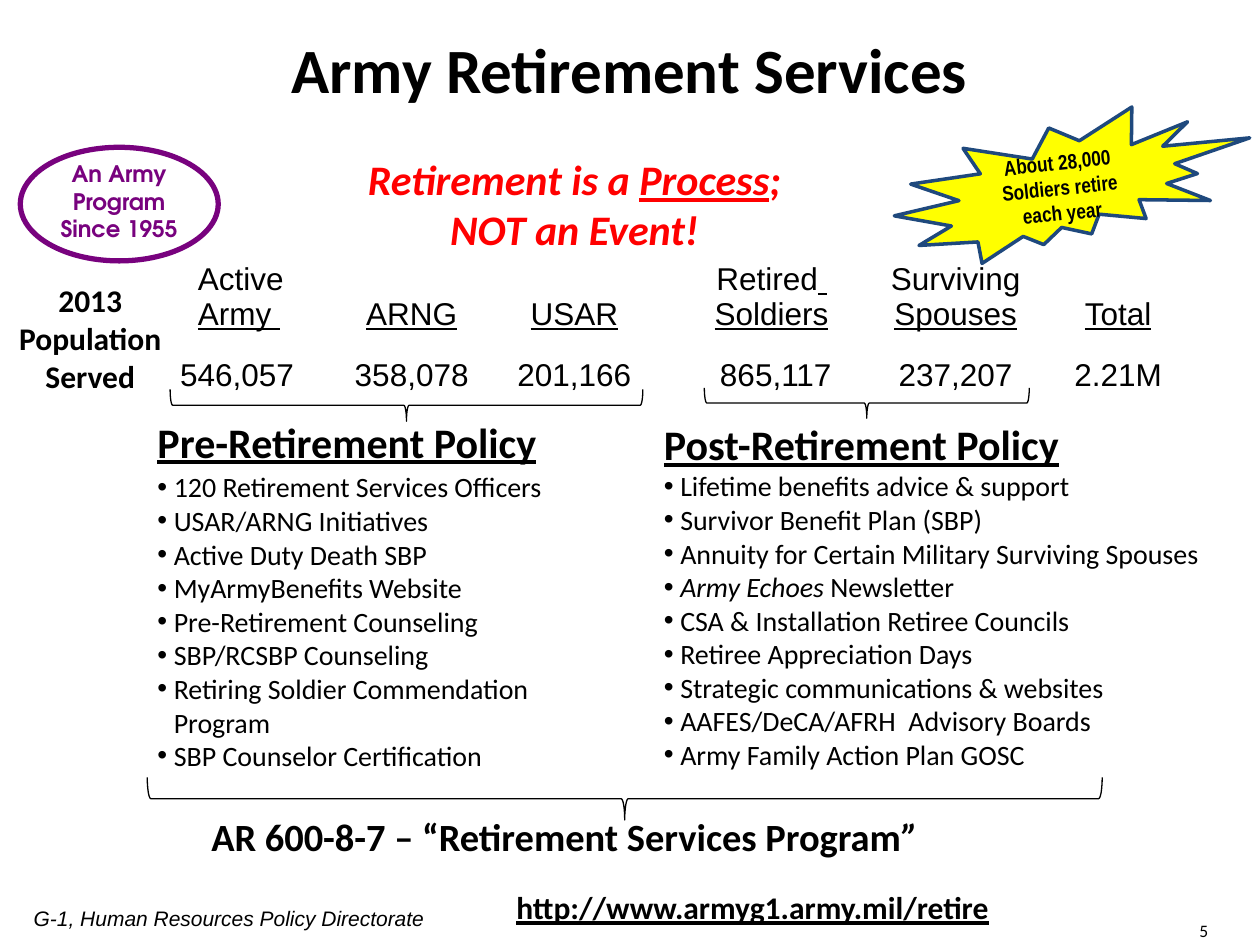
"""Build the Army Retirement Services overview slide."""
from lxml.etree import SubElement
from pptx import Presentation
from pptx.dml.color import RGBColor
from pptx.enum.shapes import MSO_SHAPE as Shape
from pptx.enum.text import MSO_ANCHOR as Anchor, MSO_AUTO_SIZE as AutoSize, PP_ALIGN as Align
from pptx.oxml.ns import qn
from pptx.util import Cm, Pt

THEME = {
    "colors": {"ink": "000000", "paper": "FFFFFF", "alert": "FF0000", "badge": "78027E",
               "burst": "FFFF00", "burst line": "1F497D"},
    "styles": {
        "title": {"name": "Calibri", "size": 36, "bold": True},
        "heading": {"name": "Calibri", "size": 24, "bold": True, "underline": True},
        "item": {"name": "Calibri", "size": 16, "bold": False},
        "slogan": {"name": "Calibri", "size": 24, "bold": True, "italic": True, "color": "alert"},
        "label": {"name": "Calibri", "size": 18, "bold": True},
        "link": {"name": "Calibri", "size": 18, "bold": True, "underline": True},
        "rule": {"name": "Calibri", "size": 22, "bold": True},
        "table": {"name": "Arial", "size": 18, "bold": False},
        "badge": {"name": "TeX Gyre Adventor", "size": 13, "bold": True, "color": "badge"},
        "burst": {"name": "Arial Narrow", "size": 12, "bold": True},
        "footer": {"name": "Arial", "size": 12, "italic": True},
        "number": {"name": "Calibri", "size": 10},
    },
}
PLAIN_TABLE = "{2D5ABB26-0587-4C30-8999-92F81FD0307C}"
UNDER, ITALIC = {"underline": True}, {"italic": True}

TITLE = ("Army Retirement Services", (3.99, 0.48, 17.4, 1.8))
POLICIES = [
    ("Pre-Retirement Policy", (2.92, 8.26, 11.48, 7.52), 2, [
        "120 Retirement Services Officers", "USAR/ARNG Initiatives", "Active Duty Death SBP",
        "MyArmyBenefits Website", "Pre-Retirement Counseling", "SBP/RCSBP Counseling",
        "Retiring Soldier Commendation\vProgram", "SBP Counselor Certification"]),
    ("Post-Retirement Policy", (13.13, 8.31, 11.9, 7.44), 0, [
        "Lifetime benefits advice & support", "Survivor Benefit Plan (SBP)",
        "Annuity for Certain Military Surviving Spouses",
        [("Army Echoes ", ITALIC), ("Newsletter", {})],
        "CSA & Installation Retiree Councils", "Retiree Appreciation Days",
        "Strategic communications & websites", "AAFES/DeCA/AFRH  Advisory Boards",
        "Army Family Action Plan GOSC"]),
]
POPULATION = [
    (3.28, ["Active", [("Army ", UNDER)]], "546,057", Align.LEFT, (0.36, 0)),
    (3.28, [[("ARNG", UNDER)]], "358,078", Align.CENTER, (0, 0)),
    (3.28, [[("USAR", UNDER)]], "201,166", Align.CENTER, (0, 0)),
    (4.14, [[("Retired", {}), (" ", UNDER)], [("Soldiers", UNDER)]], "865,117",
     Align.CENTER, (0.53, 0.7)),
    (3.81, [[("Surviving ", {}), ("Spouses", UNDER)]], "237,207", Align.CENTER, (0, 0)),
    (2.74, [[("Total", UNDER)]], "2.21M", Align.CENTER, (0, 0)),
]
TABLE_ORIGIN, ROW_HEIGHTS, CELL_MARGIN = (3.38, 4.72), (2.11, 1.22), 0.25
BRACES = [(3.43, 7.85, 9.53, 0.64), (14.2, 7.82, 6.55, 0.61), (2.97, 15.67, 19.25, 0.86)]
BURST = ("About 28,000 Soldiers retire each year", (17.98, 2.29, 7.29, 2.82))
BADGE = (["An Army", "Program", "Since 1955"], (0, 3.1, 4.8, 1.93), (0.41, 2.97, 3.99, 2.29))
TEXTS = [
    ("footer", ["G-1, Human Resources Policy Directorate"], (0.43, 18.14, 8.89, 0.76), Align.LEFT),
    ("number", ["5"], (23.93, 18.42, 1.3, 0.69), Align.LEFT),
    ("rule", [[("AR 600-8-7 – “Retirement Services Program", {}), ("”", ITALIC)]],
     (4.01, 16.26, 17.2, 1.19), Align.LEFT),
    ("label", ["2013", "Population", "Served"], (-0.1, 5.54, 3.84, 2.57), Align.CENTER),
    ("link", ["http://www.armyg1.army.mil/retire"], (10.16, 17.78, 13.34, 1.02), Align.LEFT),
    ("slogan", [[("Retirement is a ", {}), ("Process", UNDER), (";", {})], "NOT an Event!"],
     (5.23, 2.97, 12.7, 2.31), Align.CENTER),
]


def color(name):
    return RGBColor.from_string(THEME["colors"][name])


def lengths(values):
    return [Cm(value) for value in values]


def place(shape, frame):
    for side, value in zip(("left", "top", "width", "height"), lengths(frame)):
        setattr(shape, side, value)


def fill_para(para, content, style, align=Align.LEFT):
    para.alignment = align
    para.space_before = Pt(0)
    runs = [(content, {})] if isinstance(content, str) else content
    for text, changes in runs:
        for number, line in enumerate(text.split("\v")):
            if number:
                para.add_line_break()
            span = para.add_run()
            span.text = line
            values = {"color": "ink", **THEME["styles"][style], **changes}
            span.font.color.rgb = color(values.pop("color"))
            values["size"] = Pt(values["size"])
            for key, value in values.items():
                setattr(span.font, key, value)


def write(frame, paragraphs, style, align=Align.LEFT):
    for number, content in enumerate(paragraphs):
        para = frame.add_paragraph() if number else frame.paragraphs[0]
        fill_para(para, content, style, align)


def set_bullet(para, symbol=None, hang=0.0):
    properties = para._p.get_or_add_pPr()
    properties.set("marL", str(Cm(hang)))
    properties.set("indent", str(-Cm(hang)))
    if symbol:
        SubElement(properties, qn("a:buFont")).set("typeface", "Arial")
        SubElement(properties, qn("a:buChar")).set("char", symbol)
    else:
        SubElement(properties, qn("a:buNone"))


def add_text(shapes, paragraphs, frame, style, align):
    box = shapes.add_textbox(*lengths(frame))
    box.text_frame.word_wrap = True
    write(box.text_frame, paragraphs, style, align)


def add_outline(shapes, kind, frame, fill, line, width):
    shape = shapes.add_shape(kind, *lengths(frame))
    shape.shadow.inherit = False
    if fill:
        shape.fill.solid()
        shape.fill.fore_color.rgb = color(fill)
    else:
        shape.fill.background()
    shape.line.color.rgb = color(line)
    shape.line.width = Pt(width)
    return shape


def add_brace(shapes, left, top, span, depth):
    shift = (span - depth) / 2
    brace = add_outline(shapes, Shape.LEFT_BRACE, (left + shift, top - shift, depth, span),
                        "paper", "ink", 0.75)
    brace.rotation = 270


def fill_policy(box, heading, frame, gap, items):
    place(box, frame)
    text = box.text_frame
    text.auto_size = AutoSize.NONE
    write(text, [heading], "heading")
    set_bullet(text.paragraphs[0])
    for number, item in enumerate(items):
        para = text.add_paragraph()
        fill_para(para, item, "item")
        para.space_before = Pt(0 if number else gap)
        set_bullet(para, "•", 0.33)


def add_population(shapes):
    widths = [column[0] for column in POPULATION]
    frame = (*TABLE_ORIGIN, sum(widths), sum(ROW_HEIGHTS))
    table = shapes.add_table(len(ROW_HEIGHTS), len(widths), *lengths(frame)).table
    table.first_row = table.horz_banding = False
    table._tbl.tblPr.find(qn("a:tableStyleId")).text = PLAIN_TABLE
    for row, height in zip(table.rows, ROW_HEIGHTS):
        row.height = Cm(height)
    for index, (width, header, value, align, insets) in enumerate(POPULATION):
        table.columns[index].width = Cm(width)
        for row, (content, inset) in enumerate(zip((header, [value]), insets)):
            cell = table.cell(row, index)
            cell.fill.background()
            cell.vertical_anchor = Anchor.BOTTOM
            cell.margin_left = Cm(CELL_MARGIN + inset)
            write(cell.text_frame, content, "table", align)


def main():
    deck = Presentation()
    deck.slide_width, deck.slide_height = Cm(25.4), Cm(19.05)
    page = deck.slides.add_slide(deck.slide_layouts[3])
    shapes = page.shapes

    heading, frame = TITLE
    place(shapes.title, frame)
    shapes.title.text_frame.auto_size = AutoSize.NONE
    write(shapes.title.text_frame, [heading], "title", Align.CENTER)
    for index, policy in enumerate(POLICIES, start=1):
        fill_policy(page.placeholders[index], *policy)

    text, frame = BURST
    burst = add_outline(shapes, Shape.EXPLOSION2, frame, "burst", "burst line", 2)
    burst.rotation = 354
    burst.text_frame.word_wrap = True
    burst.text_frame.vertical_anchor = Anchor.MIDDLE
    write(burst.text_frame, [text], "burst", Align.CENTER)

    for brace in BRACES:
        add_brace(shapes, *brace)
    add_population(shapes)
    for style, paragraphs, frame, align in TEXTS:
        add_text(shapes, paragraphs, frame, style, align)

    lines, text_frame, oval_frame = BADGE
    badge = shapes.add_group_shape()
    add_text(badge.shapes, lines, text_frame, "badge", Align.CENTER)
    add_outline(badge.shapes, Shape.OVAL, oval_frame, None, "badge", 3)
    deck.save("out.pptx")


if __name__ == "__main__":
    main()
